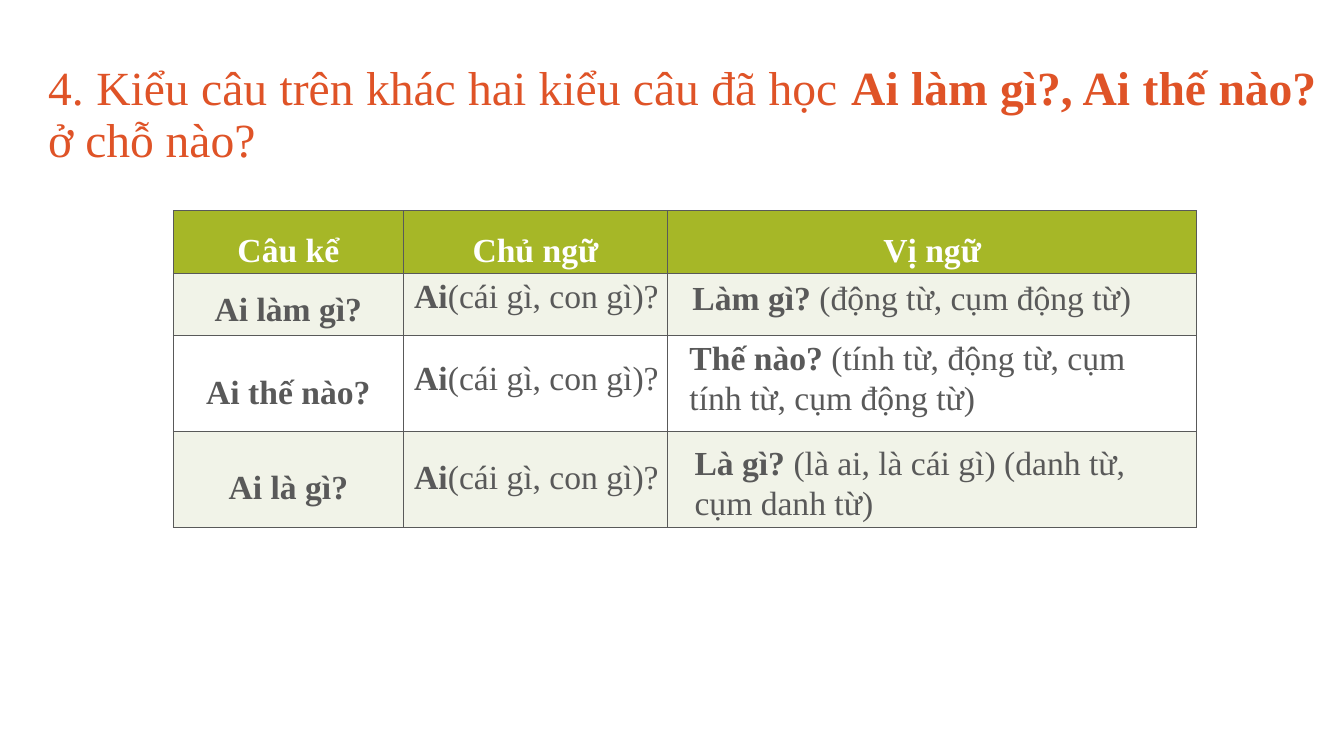
import pptx
import pptx.dml.color
import pptx.enum.text
import pptx.oxml
import pptx.oxml.ns
import pptx.util

EMU_PER_PX = 9144  # 100 px to the inch
FONT = "Times New Roman"
ORANGE, GREEN, PALE, WHITE, GRAY = "DF5327", "A6B727", "F1F3E8", "FFFFFF", "595959"
ALIGN = pptx.enum.text.PP_ALIGN
ANCHOR = pptx.enum.text.MSO_ANCHOR

COLUMN_WIDTHS = [228, 262, 525]
ROW_HEIGHTS = [62, 62, 95, 95]
HEADINGS = ["Câu kể", "Chủ ngữ", "Vị ngữ"]
SENTENCE_TYPES = ["Ai làm gì?", "Ai thế nào?", "Ai là gì?"]

# Tops of the subject answers, and (box, bold part, plain part) of the predicates
SUBJECT_TOPS = [268, 349, 447]
PREDICATES = [
    ((677, 270, 496, 50), "Làm gì? ", "(động từ, cụm động từ)"),
    ((674, 329, 510, 91), "Thế nào? ", "(tính từ, động từ, cụm tính từ, cụm động từ)"),
    ((679, 433, 471, 91), "Là gì? ", "(là ai, là cái gì) (danh từ, cụm danh từ)"),
]


def px(length):
    return pptx.util.Emu(length * EMU_PER_PX)


def color(hex_string):
    return pptx.dml.color.RGBColor.from_string(hex_string)


def write_text(frame, runs, size=24, hex_color=GRAY, align=ALIGN.LEFT, spacing=1.0):
    """Fill the first paragraph with (text, bold) runs."""
    paragraph = frame.paragraphs[0]
    paragraph.alignment = align
    paragraph.line_spacing = spacing
    for text, bold in runs:
        run = paragraph.add_run()
        run.text = text
        run.font.name = FONT
        run.font.size = pptx.util.Pt(size)
        run.font.bold = bold
        run.font.color.rgb = color(hex_color)


def add_text_box(slide, box, runs, anchor=ANCHOR.TOP, **text_format):
    frame = slide.shapes.add_textbox(*map(px, box)).text_frame
    frame.word_wrap = True
    frame.vertical_anchor = anchor
    write_text(frame, runs, **text_format)


def set_borders(cell, hex_color):
    properties = cell._tc.get_or_add_tcPr()
    for position, side in enumerate(("lnL", "lnR", "lnT", "lnB")):
        line = pptx.oxml.parse_xml(
            f'<a:{side} {pptx.oxml.ns.nsdecls("a")} w="12700"><a:solidFill>'
            f'<a:srgbClr val="{hex_color}"/></a:solidFill></a:{side}>'
        )
        properties.insert(position, line)


def format_cell(cell, fill, anchor):
    cell.fill.solid()
    cell.fill.fore_color.rgb = color(fill)
    cell.margin_left = cell.margin_right = px(7)
    cell.margin_top = cell.margin_bottom = 0
    cell.vertical_anchor = anchor
    set_borders(cell, GRAY)


def add_sentence_table(slide):
    shape = slide.shapes.add_table(
        len(ROW_HEIGHTS), len(COLUMN_WIDTHS), px(172), px(209),
        px(sum(COLUMN_WIDTHS)), px(sum(ROW_HEIGHTS)))
    table = shape.table
    for column, width in zip(table.columns, COLUMN_WIDTHS):
        column.width = px(width)
    for row, height in zip(table.rows, ROW_HEIGHTS):
        row.height = px(height)

    fills = [GREEN, PALE, WHITE, PALE]
    for row_index, fill in enumerate(fills):
        anchor = ANCHOR.TOP if row_index == 1 else ANCHOR.MIDDLE
        for cell in table.rows[row_index].cells:
            format_cell(cell, fill, anchor)

    centered = {"align": ALIGN.CENTER, "spacing": 1.5}
    for column_index, heading in enumerate(HEADINGS):
        write_text(table.cell(0, column_index).text_frame, [(heading, True)],
                   hex_color=WHITE, **centered)
    for row_index, sentence_type in enumerate(SENTENCE_TYPES, start=1):
        write_text(table.cell(row_index, 0).text_frame, [(sentence_type, True)], **centered)


def main():
    presentation = pptx.Presentation()
    presentation.slide_width, presentation.slide_height = px(1333), px(750)
    slide = presentation.slides.add_slide(presentation.slide_layouts[6])

    # Question
    add_text_box(
        slide, (38, 40, 1278, 131),
        [("4. Kiểu câu trên khác hai kiểu câu đã học ", False),
         ("Ai làm gì?, Ai thế nào? ", True),
         ("ở chỗ nào?", False)],
        anchor=ANCHOR.BOTTOM, size=34, hex_color=ORANGE, align=ALIGN.JUSTIFY, spacing=0.9)

    # Comparison table
    add_sentence_table(slide)

    # Answers laid over the table
    for top in SUBJECT_TOPS:
        add_text_box(slide, (401, top, 278, 50), [("Ai", True), ("(cái gì, con gì)?", False)])
    for box, question, word_types in PREDICATES:
        add_text_box(slide, box, [(question, True), (word_types, False)])

    presentation.save("out.pptx")


if __name__ == "__main__":
    main()
